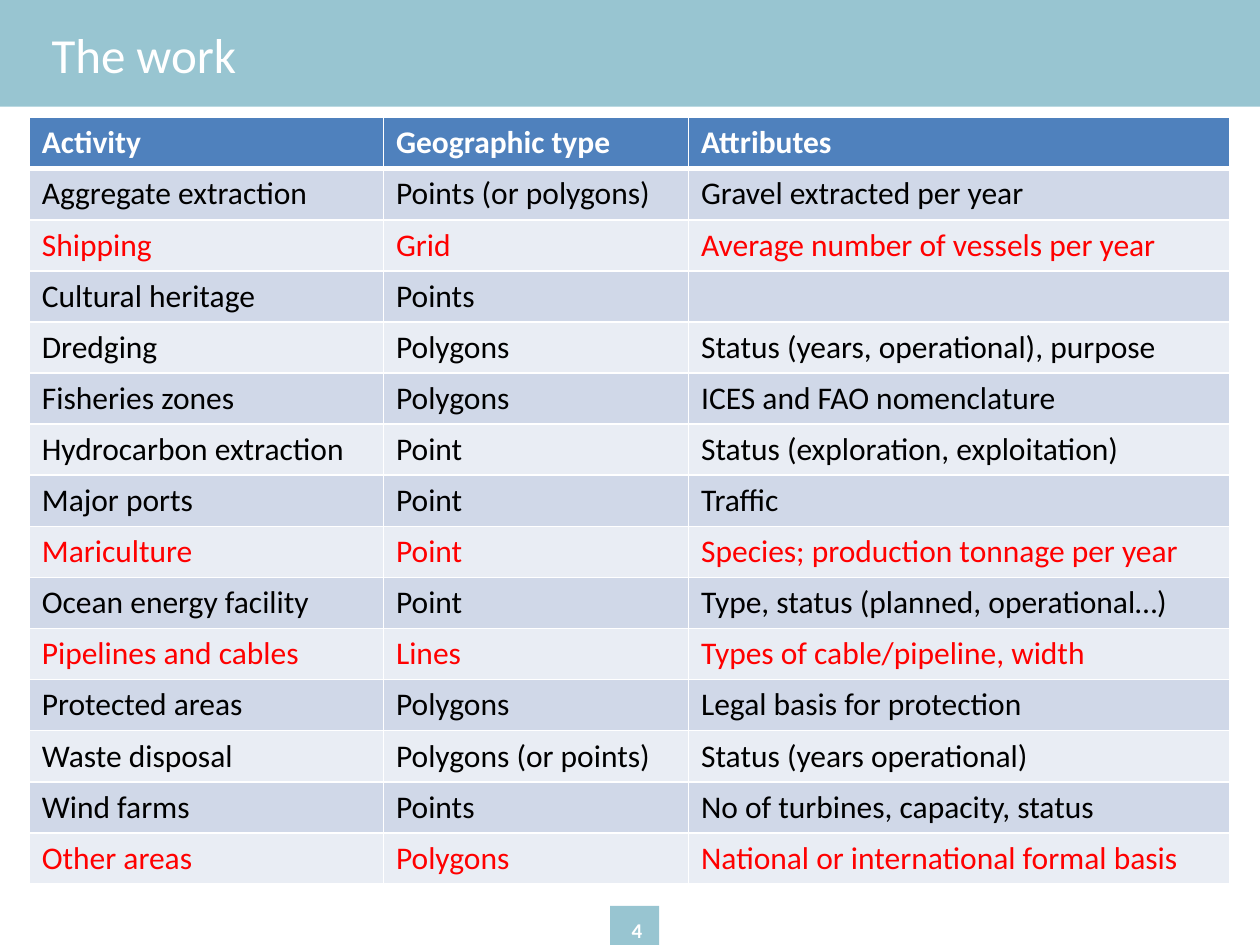
from dataclasses import dataclass

from lxml import etree
from pptx import Presentation
from pptx.dml.color import RGBColor
from pptx.enum.shapes import MSO_SHAPE
from pptx.enum.text import MSO_ANCHOR, PP_ALIGN
from pptx.oxml.ns import qn
from pptx.util import Cm, Pt

RECTANGLE = MSO_SHAPE.RECTANGLE
MIDDLE = MSO_ANCHOR.MIDDLE
LEFT, RIGHT = PP_ALIGN.LEFT, PP_ALIGN.RIGHT

FONT = "Calibri"
COLORS = {
    "band": "98C5D1",
    "header": "4F81BD",
    "odd": "D0D8E8",
    "even": "E9EDF4",
    "white": "FFFFFF",
    "black": "000000",
    "red": "FF0000",
}
COLUMN_WIDTHS = (7.14, 6.15, 10.92)
ROW_HEIGHT = 1.03


@dataclass
class Area:
    left: float
    top: float
    width: float
    height: float

    def lengths(self) -> tuple:
        return Cm(self.left), Cm(self.top), Cm(self.width), Cm(self.height)


@dataclass
class Activity:
    name: str
    geometry: str
    attributes: str = ""
    highlighted: bool = False


HEADINGS = Activity("Activity", "Geographic type", "Attributes")
ACTIVITIES = [
    Activity("Aggregate extraction", "Points (or polygons)", "Gravel extracted per year"),
    Activity("Shipping", "Grid", "Average number of vessels per year", True),
    Activity("Cultural heritage", "Points"),
    Activity("Dredging", "Polygons", "Status (years, operational), purpose"),
    Activity("Fisheries zones", "Polygons", "ICES and FAO nomenclature"),
    Activity("Hydrocarbon extraction", "Point", "Status (exploration, exploitation)"),
    Activity("Major ports", "Point", "Traffic"),
    Activity("Mariculture", "Point", "Species; production tonnage per year", True),
    Activity("Ocean energy facility", "Point", "Type, status (planned, operational…)"),
    Activity("Pipelines and cables", "Lines", "Types of cable/pipeline, width", True),
    Activity("Protected areas", "Polygons", "Legal basis for protection"),
    Activity("Waste disposal", "Polygons (or points)", "Status (years operational)"),
    Activity("Wind farms", "Points", "No of turbines, capacity, status"),
    Activity("Other areas", "Polygons", "National or international formal basis", True),
]


def color(name: str) -> RGBColor:
    return RGBColor.from_string(COLORS[name])


def style_paragraph(para, size: int, color_name: str, bold: bool = False) -> None:
    font = para.font
    font.name, font.size, font.bold = FONT, Pt(size), bold
    font.color.rgb = color(color_name)


def add_band(page, area: Area) -> None:
    band = page.shapes.add_shape(RECTANGLE, *area.lengths())
    band.shadow.inherit = False
    band.fill.solid()
    band.fill.fore_color.rgb = color("band")
    band.line.fill.background()


def add_label(page, area: Area, text: str, size: int, align, bold: bool = False) -> None:
    box = page.shapes.add_textbox(*area.lengths())
    frame = box.text_frame
    frame.word_wrap = True
    frame.vertical_anchor = MIDDLE
    para = frame.paragraphs[0]
    para.text = text
    para.alignment = align
    style_paragraph(para, size, "white", bold)


def set_borders(cell, top: int, bottom: int) -> None:
    properties = cell._tc.get_or_add_tcPr()
    for tag, points in (("lnL", 1), ("lnR", 1), ("lnT", top), ("lnB", bottom)):
        line = etree.SubElement(properties, qn(f"a:{tag}"), w=str(Pt(points)))
        fill = etree.SubElement(line, qn("a:solidFill"))
        etree.SubElement(fill, qn("a:srgbClr"), val=COLORS["white"])


def fill_row(table, index: int, activity: Activity) -> None:
    is_header = index == 0
    if is_header:
        fill_name, text_name = "header", "white"
    else:
        fill_name = "odd" if index % 2 else "even"
        text_name = "red" if activity.highlighted else "black"
    texts = (activity.name, activity.geometry, activity.attributes)
    for cell, text in zip(table.rows[index].cells, texts):
        # The rule under the header is shared with the first body row
        set_borders(cell, top=3 if index == 1 else 1, bottom=3 if is_header else 1)
        cell.fill.solid()
        cell.fill.fore_color.rgb = color(fill_name)
        para = cell.text_frame.paragraphs[0]
        if text:
            para.text = text
        style_paragraph(para, 18, text_name, is_header)


def add_activity_table(page, left: float, top: float) -> None:
    rows = [HEADINGS, *ACTIVITIES]
    area = Area(left, top, sum(COLUMN_WIDTHS), ROW_HEIGHT * len(rows))
    table = page.shapes.add_table(len(rows), len(COLUMN_WIDTHS), *area.lengths()).table
    for column, width in zip(table.columns, COLUMN_WIDTHS):
        column.width = Cm(width)
    for index, activity in enumerate(rows):
        table.rows[index].height = Cm(ROW_HEIGHT)
        fill_row(table, index, activity)


def main() -> None:
    deck = Presentation()
    deck.slide_width, deck.slide_height = Cm(25.4), Cm(19.05)
    page = deck.slides.add_slide(deck.slide_layouts[6])

    # Page number tab and title band
    add_band(page, Area(12.3, 18.26, 0.99, 0.79))
    add_band(page, Area(0, 0, 25.4, 2.15))
    add_label(page, Area(11.7, 18.24, 1.5, 1.02), "4", 12, RIGHT, bold=True)
    add_label(page, Area(0.79, 0, 10.1, 2.18), "The work", 28, LEFT)

    # Activities and their map data
    add_activity_table(page, 0.59, 2.37)

    deck.save("out.pptx")


if __name__ == "__main__":
    main()
